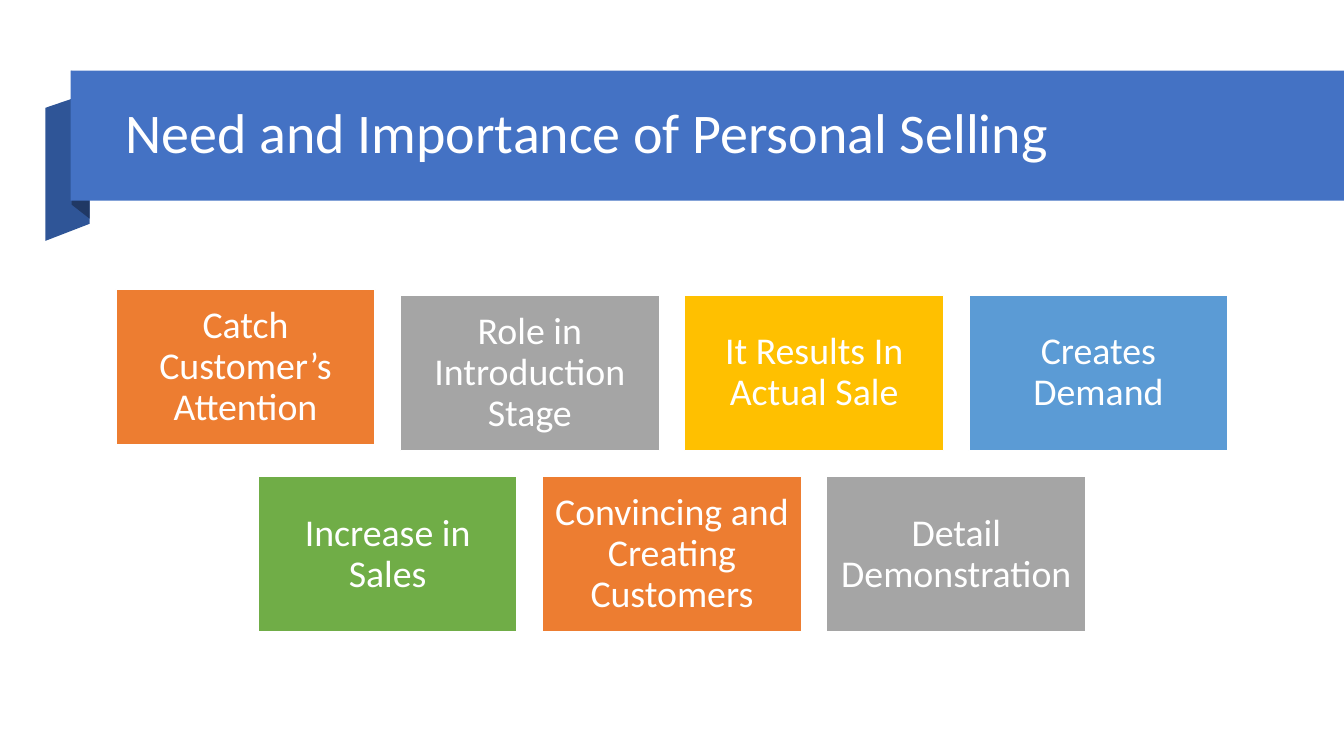
from pptx import Presentation
from pptx.dml.color import RGBColor
from pptx.enum.shapes import MSO_SHAPE
from pptx.enum.text import MSO_ANCHOR, PP_ALIGN
from pptx.util import Inches, Pt

RECTANGLE = MSO_SHAPE.RECTANGLE
MIDDLE = MSO_ANCHOR.MIDDLE
LEFT, CENTER = PP_ALIGN.LEFT, PP_ALIGN.CENTER

COLORS = {
    "white": "FFFFFF",
    "banner": "4472C4",
    "ribbon": "2F5597",
    "fold": "203864",
    "orange": "ED7D31",
    "gray": "A5A5A5",
    "gold": "FFC000",
    "blue": "5B9BD5",
    "green": "70AD47",
}

CARD_WIDTH, CARD_HEIGHT = 2.57, 1.54
CARD_PITCH = 2.82
FIRST_CARD_RISE = 0.06

# Left edge, top edge and cards of each row
CARD_ROWS = [
    (1.15, 2.93, [
        ("Catch Customer’s Attention", "orange"),
        ("Role in Introduction Stage", "gray"),
        ("It Results In Actual Sale", "gold"),
        ("Creates Demand", "blue"),
    ]),
    (2.56, 4.73, [
        ("Increase in Sales", "green"),
        ("Convincing and Creating Customers", "orange"),
        ("Detail Demonstration", "gray"),
    ]),
]


class SlideBuilder:
    def __init__(self, slide, font="Calibri"):
        self.shapes = slide.shapes
        self.font = font

    def color(self, name):
        return RGBColor.from_string(COLORS[name])

    def paint(self, shape, fill, line=None):
        shape.shadow.inherit = False
        shape.fill.solid()
        shape.fill.fore_color.rgb = self.color(fill)
        if line:
            shape.line.color.rgb = self.color(line)
            shape.line.width = Pt(1)
        else:
            shape.line.fill.background()

    def polygon(self, points, fill):
        corners = [(Inches(x), Inches(y)) for x, y in points]
        outline = self.shapes.build_freeform(*corners[0])
        outline.add_line_segments(corners[1:], close=True)
        self.paint(outline.convert_to_shape(), fill)

    def rectangle(self, left, top, width, height, fill, line=None):
        box = self.shapes.add_shape(
            RECTANGLE, Inches(left), Inches(top), Inches(width), Inches(height))
        self.paint(box, fill, line)
        return box

    def set_text(self, box, text, size, align):
        frame = box.text_frame
        frame.word_wrap = True
        frame.vertical_anchor = MIDDLE
        frame.text = text
        para = frame.paragraphs[0]
        para.alignment = align
        para.line_spacing = 0.9
        span = para.runs[0]
        span.font.name = self.font
        span.font.size = Pt(size)
        span.font.color.rgb = self.color("white")

    def title(self, left, top, width, height, text):
        box = self.shapes.add_textbox(
            Inches(left), Inches(top), Inches(width), Inches(height))
        self.set_text(box, text, 40, LEFT)

    def card(self, left, top, text, fill):
        box = self.rectangle(left, top, CARD_WIDTH, CARD_HEIGHT, fill, "white")
        frame = box.text_frame
        frame.margin_left = frame.margin_right = Inches(0.11)
        frame.margin_top = frame.margin_bottom = Inches(0.11)
        self.set_text(box, text, 27, CENTER)


def main():
    deck = Presentation()
    deck.slide_width = Inches(13.33)
    deck.slide_height = Inches(7.5)
    page = SlideBuilder(deck.slides.add_slide(deck.slide_layouts[6]))

    page.polygon([(0.89, 2.22), (0.45, 2.39), (0.45, 1.07), (0.89, 0.92)], "ribbon")
    page.polygon([(0.89, 2.17), (0.71, 2.03), (0.71, 0.7), (0.89, 0.85)], "fold")
    page.rectangle(0.7, 0.7, 12.63, 1.29, "banner")
    page.title(1.15, 0.86, 11.27, 0.96, "Need and Importance of Personal Selling")

    for row, (left, top, cards) in enumerate(CARD_ROWS):
        for column, (text, fill) in enumerate(cards):
            rise = FIRST_CARD_RISE if row == column == 0 else 0
            page.card(left + column * CARD_PITCH, top - rise, text, fill)

    deck.save("out.pptx")


if __name__ == "__main__":
    main()
